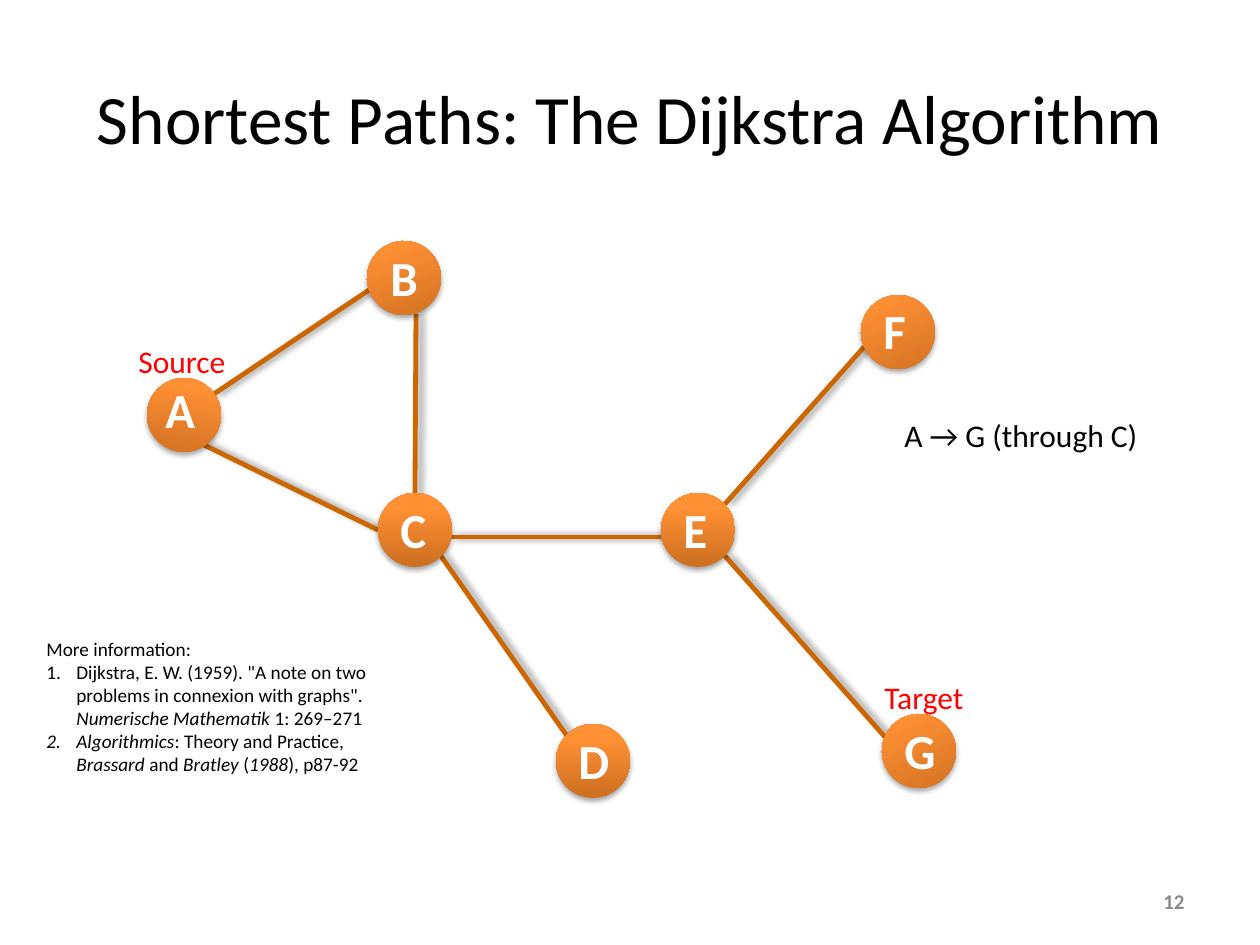
from dataclasses import dataclass

from lxml import etree
from pptx import Presentation
from pptx.dml.color import RGBColor
from pptx.enum.shapes import MSO_CONNECTOR as Connector, MSO_SHAPE as Shape
from pptx.enum.text import MSO_ANCHOR as Anchor, PP_ALIGN as Align
from pptx.oxml import parse_xml
from pptx.oxml.ns import nsdecls, qn
from pptx.util import Pt


@dataclass(frozen=True)
class Theme:
    font: str = "Calibri"
    ink: str = "000000"
    accent: str = "FF0000"
    node_text: str = "FFFFFF"
    edge: str = "CC6600"
    muted: str = "898989"
    node_stops: tuple = ((0, "CC6E20"), (80, "FF9034"), (100, "FF9136"))
    title_size: float = 39.6
    node_size: int = 28
    label_size: int = 18
    reference_size: int = 11
    number_size: int = 12
    edge_width: float = 2.75


theme = Theme()
PX = 914400 / 126


def write(box, paragraphs, size, color=theme.ink, bold=False,
          align=Align.LEFT, anchor=Anchor.TOP, indent=0):
    """Fill a box; a paragraph is a list of (text, italic) runs.

    With an indent, every paragraph after the first is numbered.
    """
    frame = box.text_frame
    frame.word_wrap = True
    frame.vertical_anchor = anchor
    for index, runs in enumerate(paragraphs):
        paragraph = frame.add_paragraph() if index else frame.paragraphs[0]
        paragraph.alignment = align
        if indent and index:
            props = paragraph._p.get_or_add_pPr()
            props.set("marL", str(round(indent * PX)))
            props.set("indent", str(round(-indent * PX)))
            etree.SubElement(props, qn("a:buFont"), typeface="+mj-lt")
            etree.SubElement(props, qn("a:buAutoNum"), type="arabicPeriod")
        for text, italic in runs:
            run = paragraph.add_run()
            run.text = text
            font = run.font
            font.name, font.size = theme.font, Pt(size)
            font.bold, font.italic = bold, italic
            font.color.rgb = RGBColor.from_string(color)


def add_shadow(shape, blur, distance, degrees, opacity):
    """Give the shape an outer shadow; call after its fill and line are set."""
    shape._element.spPr.append(parse_xml(
        f'<a:effectLst {nsdecls("a")}><a:outerShdw blurRad="{Pt(blur)}" '
        f'dist="{Pt(distance)}" dir="{degrees * 60000}" rotWithShape="0">'
        f'<a:srgbClr val="000000"><a:alpha val="{opacity * 1000}"/></a:srgbClr>'
        '</a:outerShdw></a:effectLst>'))


prs = Presentation()
prs.slide_width, prs.slide_height = round(1260 * PX), round(945 * PX)
slide = prs.slides.add_slide(prs.slide_layouts[5])

title = slide.shapes.title
title.left, title.top, title.width, title.height = (
    round(n * PX) for n in (63, 38, 1134, 158))
write(title, [[("Shortest Paths: The Dijkstra Algorithm", False)]],
      theme.title_size, align=Align.CENTER, anchor=Anchor.MIDDLE)

# Edges of the graph: x and y of both ends
edges = {
    "BA": (369, 290, 214, 394),
    "EC": (662, 537, 451, 537),
    "BC": (416, 314, 415, 494),
    "AC": (204, 445, 378, 530),
    "DC": (567, 736, 441, 556),
    "FE": (864, 347, 725, 504),
    "GE": (885, 737, 725, 556),
}
for ends in edges.values():
    edge = slide.shapes.add_connector(
        Connector.STRAIGHT, *(round(n * PX) for n in ends))
    edge.line.color.rgb = RGBColor.from_string(theme.edge)
    edge.line.width = Pt(theme.edge_width)
    add_shadow(edge, blur=4, distance=3, degrees=0, opacity=40)

# Nodes: left, top, rotation, and offset of the letter's box
DIAMETER = 74
nodes = {
    "B": (367, 241, -18, 11, 0),
    "A": (147, 378, 11, 6, -5),
    "C": (378, 493, 0, 10, 0),
    "D": (556, 724, 0, 10, 0),
    "E": (661, 493, 0, 10, 0),
    "F": (861, 295, -24, 10, -1),
    "G": (882, 714, -24, 10, 0),
}
stops = "".join(
    f'<a:gs pos="{percent * 1000}"><a:srgbClr val="{color}"/></a:gs>'
    for percent, color in theme.node_stops)
for letter, (left, top, rotation, dx, dy) in nodes.items():
    node = slide.shapes.add_group_shape()
    disc = node.shapes.add_shape(
        Shape.OVAL, *(round(n * PX) for n in (left, top, DIAMETER, DIAMETER)))
    disc.rotation = rotation
    disc._element.spPr.append(parse_xml(
        f'<a:gradFill {nsdecls("a")} rotWithShape="1"><a:gsLst>{stops}</a:gsLst>'
        '<a:lin ang="16200000" scaled="0"/></a:gradFill>'))
    disc.line.fill.background()
    add_shadow(disc, blur=3.1, distance=1.8, degrees=90, opacity=35)
    caption = node.shapes.add_textbox(
        *(round(n * PX) for n in (left + dx, top + dy, 53, 72)))
    write(caption, [[(letter, False)]], theme.node_size, theme.node_text, bold=True)

references = [
    [("More information:", False)],
    [('Dijkstra, E. W. (1959). "A note on two problems in connexion with graphs". ', False),
     ("Numerische Mathematik ", True), ("1: 269–271", False)],
    [("Algorithmics", True), (": Theory and Practice, ", False), ("Brassard", True),
     (" and ", False), ("Bratley", True), (" (", False), ("1988", True),
     ("), p87-92", False)],
]
label = {"size": theme.label_size}
end_label = {**label, "color": theme.accent}
notes = [
    ((126, 336, 116, 50), [[("Source", False)]], end_label),
    ((872, 672, 116, 50), [[("Target", False)]], end_label),
    ((892, 410, 284, 115), [[("A → G (through C)", False)]], label),
    ((34, 631, 367, 152), references, {"size": theme.reference_size, "indent": 30}),
    ((903, 876, 294, 50), [[("12", False)]],
     {"size": theme.number_size, "color": theme.muted, "bold": True,
      "align": Align.RIGHT, "anchor": Anchor.MIDDLE}),
]
for place, paragraphs, style in notes:
    box = slide.shapes.add_textbox(*(round(n * PX) for n in place))
    write(box, paragraphs, **style)

prs.save("out.pptx")
